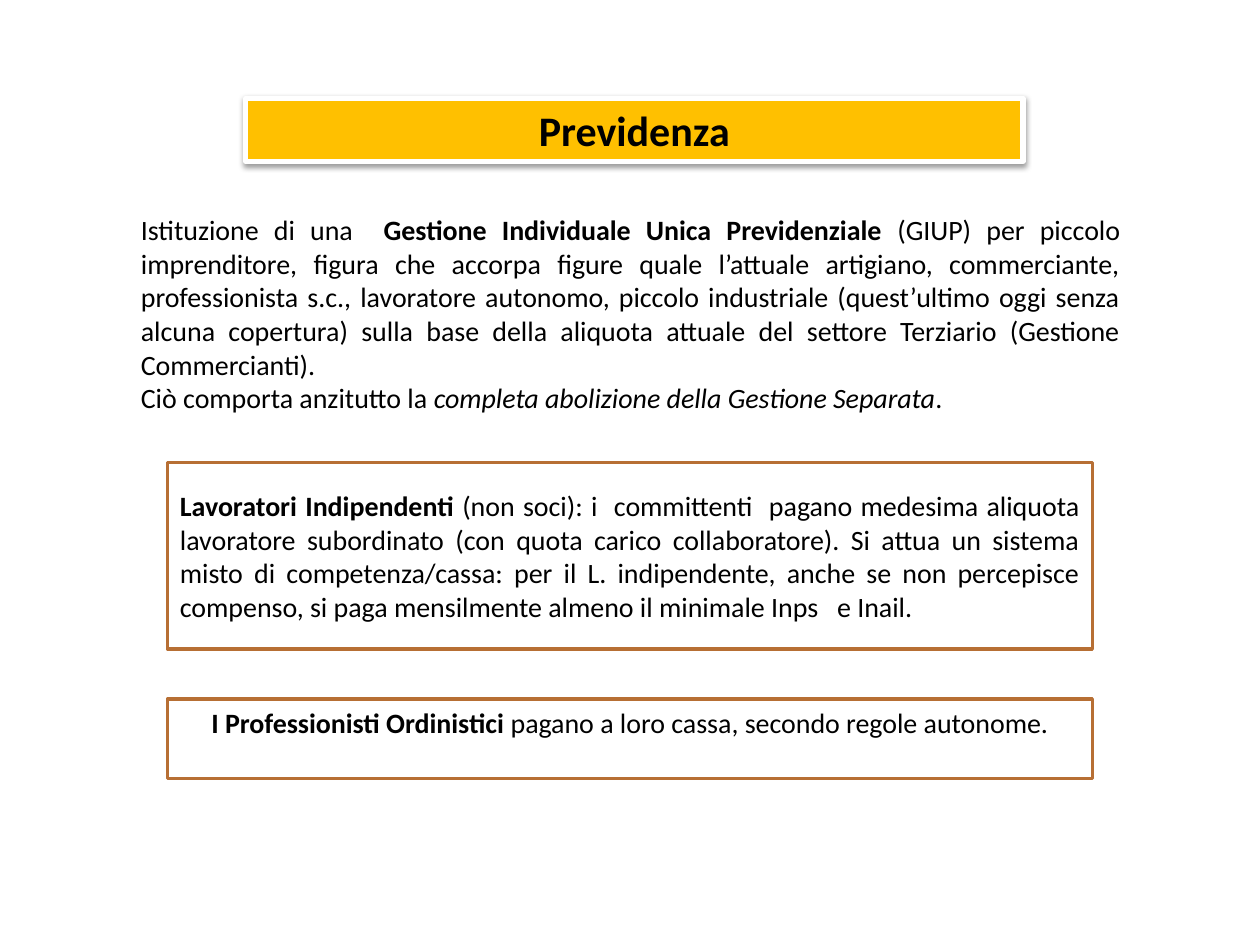
import pptx
import pptx.dml.color
import pptx.enum.shapes
import pptx.enum.text
import pptx.oxml
import pptx.oxml.ns
import pptx.util

ALIGN = pptx.enum.text.PP_ALIGN
ANCHOR = pptx.enum.text.MSO_ANCHOR
RECTANGLE = pptx.enum.shapes.MSO_SHAPE.RECTANGLE


def color(value):
    return pptx.dml.color.RGBColor.from_string(value)


def apply_format(target, values):
    for name, value in values.items():
        setattr(target, name, value)


presentation = pptx.Presentation()
apply_format(presentation, {
    "slide_width": pptx.util.Inches(10),
    "slide_height": pptx.util.Inches(7.5),
})
slide = presentation.slides.add_slide(presentation.slide_layouts[6])
column = presentation.slide_width / 100
row = presentation.slide_height / 100

PLAIN = {"bold": False, "italic": False}
BOLD = {"bold": True, "italic": False}
ITALIC = {"bold": False, "italic": True}
FRAME_LEFT, FRAME_WIDTH = 13.3, 73.4

boxes = [
    {
        "grid": (19.5, 10.4, 61.7, 6.67), "fill": "FFC000", "line": ("FFFFFF", 3),
        "shadow": True, "anchor": ANCHOR.TOP, "align": ALIGN.CENTER, "size": 24,
        "paragraphs": [[("Previdenza", BOLD)]],
    },
    {
        "grid": (FRAME_LEFT, 48.93, FRAME_WIDTH, 19.73), "fill": None, "line": ("B76F34", 2),
        "shadow": False, "anchor": ANCHOR.MIDDLE, "align": ALIGN.JUSTIFY, "size": 16,
        "paragraphs": [[
            ("Lavoratori Indipendenti", BOLD),
            (" (non soci): i  committenti  pagano medesima aliquota lavoratore subordinato "
             "(con quota carico collaboratore). Si attua un sistema misto di competenza/cassa: "
             "per il L. indipendente, anche se non percepisce compenso, si paga mensilmente "
             "almeno il minimale Inps   e Inail.", PLAIN),
        ]],
    },
    {
        "grid": (10.2, 21.87, 79.7, 30.93), "fill": None, "line": None,
        "shadow": False, "anchor": ANCHOR.TOP, "align": ALIGN.JUSTIFY, "size": 16,
        "paragraphs": [
            [
                ("Istituzione di una  ", PLAIN),
                ("Gestione Individuale Unica Previdenziale", BOLD),
                (" (GIUP) per piccolo imprenditore, figura che accorpa figure quale l’attuale "
                 "artigiano, commerciante, professionista s.c., lavoratore autonomo, piccolo "
                 "industriale (quest’ultimo oggi senza alcuna copertura) sulla base della "
                 "aliquota attuale del settore Terziario (Gestione Commercianti).", PLAIN),
            ],
            [
                ("Ciò comporta anzitutto la ", PLAIN),
                ("completa abolizione della Gestione Separata", ITALIC),
                (".", PLAIN),
            ],
        ],
    },
    {
        "grid": (FRAME_LEFT, 74, FRAME_WIDTH, 8.4), "fill": None, "line": ("B76F34", 2),
        "shadow": False, "anchor": ANCHOR.TOP, "align": ALIGN.CENTER, "size": 16,
        "paragraphs": [[
            ("I Professionisti Ordinistici", BOLD),
            (" pagano a loro cassa, secondo regole autonome.", PLAIN),
        ]],
    },
]

for box in boxes:
    place = [round(share * unit) for share, unit in zip(box["grid"], (column, row, column, row))]
    if box["line"]:
        shape = slide.shapes.add_shape(RECTANGLE, *place)
        shape.shadow.inherit = False
        line_color, line_width = box["line"]
        shape.line.color.rgb = color(line_color)
        shape.line.width = pptx.util.Pt(line_width)
    else:
        shape = slide.shapes.add_textbox(*place)
    if box["fill"]:
        shape.fill.solid()
        shape.fill.fore_color.rgb = color(box["fill"])
    else:
        shape.fill.background()
    if box["shadow"]:
        effects = shape._element.spPr.find(pptx.oxml.ns.qn("a:effectLst"))
        effects.append(pptx.oxml.parse_xml(
            f'<a:outerShdw {pptx.oxml.ns.nsdecls("a")} blurRad="40000" dist="20000" '
            'dir="5400000" rotWithShape="0"><a:srgbClr val="000000">'
            '<a:alpha val="38000"/></a:srgbClr></a:outerShdw>'
        ))

    frame = shape.text_frame
    apply_format(frame, {"word_wrap": True, "vertical_anchor": box["anchor"]})
    for index, runs in enumerate(box["paragraphs"]):
        paragraph = frame.add_paragraph() if index else frame.paragraphs[0]
        paragraph.alignment = box["align"]
        for text, style in runs:
            run = paragraph.add_run()
            run.text = text
            apply_format(run.font, {"name": "Calibri", "size": pptx.util.Pt(box["size"]), **style})
            run.font.color.rgb = color("000000")

presentation.save("out.pptx")
